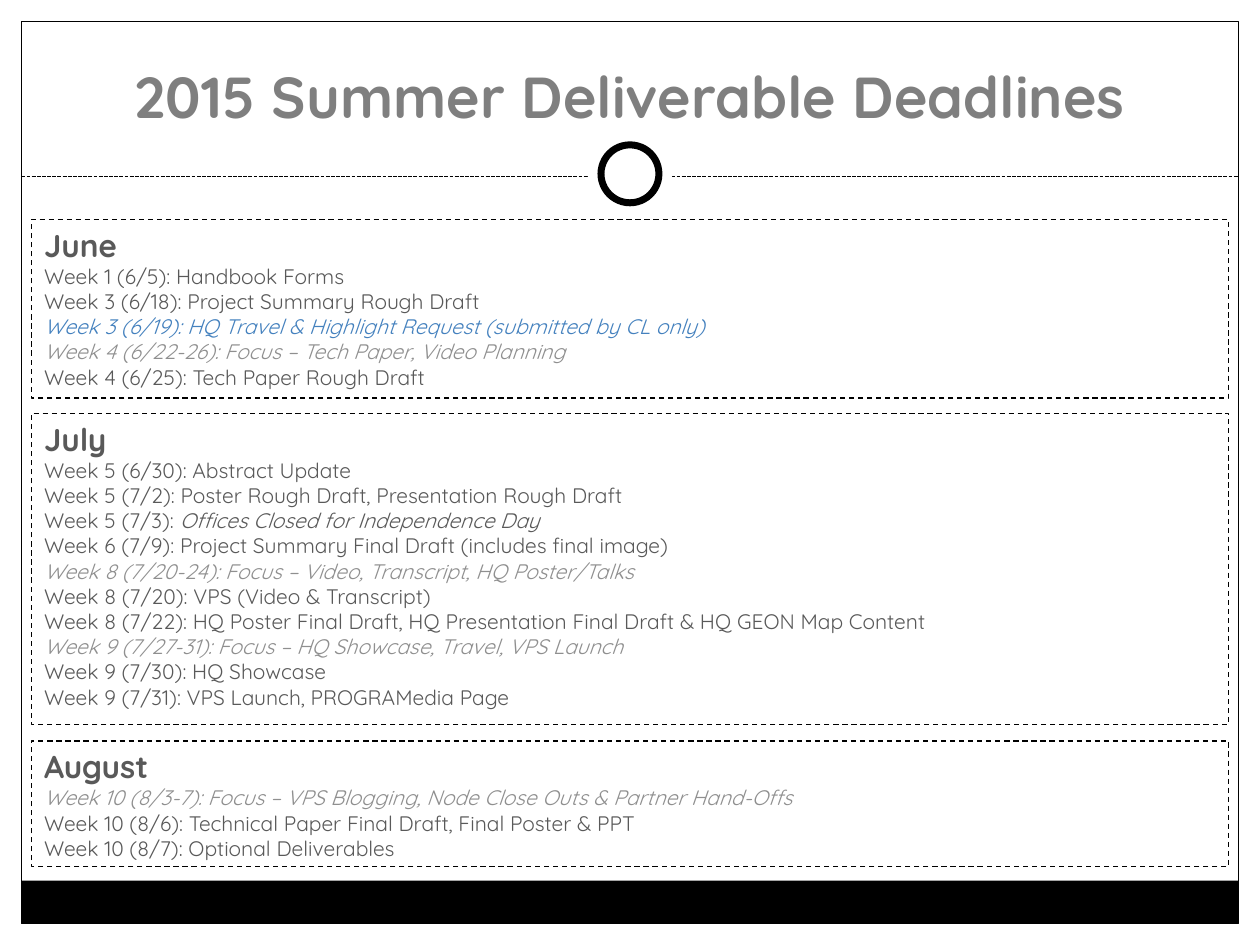
"""Build the slide of summer deliverable deadlines, one dashed box per month."""
from lxml import etree
from pptx import Presentation
from pptx import util as u
from pptx.dml.color import RGBColor
from pptx.enum import dml, shapes, text
from pptx.oxml.ns import qn

BLACK = RGBColor(0x00, 0x00, 0x00)
WHITE = RGBColor(0xFF, 0xFF, 0xFF)
DARK = RGBColor(0x59, 0x59, 0x59)
TITLE = RGBColor(0x7F, 0x7F, 0x7F)
FOCUS = RGBColor(0x8F, 0x8F, 0x8F)
BLUE = RGBColor(0x44, 0x81, 0xBE)
W, H = 10, 7.5
EDGE, MARGIN, RULE_Y, BAR_Y = 0.17, 0.25, 1.4, 6.99
RING_Y = 1.38
FONT = "Quicksand"

PLAIN = {"size": u.Pt(12), "bold": False, "italic": False, "color": DARK}
ITALIC = {**PLAIN, "italic": True}
NOTE = {**ITALIC, "color": FOCUS}
REQUEST = {**ITALIC, "color": BLUE}
HEAD = {**PLAIN, "size": u.Pt(18), "bold": True}
HEADLINE = {**HEAD, "size": u.Pt(33), "color": TITLE}

MONTHS = [
    ("June", 1.74, 1.42, [
        [("Week 1 (6/5): Handbook Forms", PLAIN)],
        [("Week 3 (6/18): Project Summary Rough Draft", PLAIN)],
        [("Week 3 (6/19): HQ Travel & Highlight Request (submitted by CL only)", REQUEST)],
        [("Week 4 (6/22-26): Focus – Tech Paper, Video Planning", NOTE)],
        [("Week 4 (6/25): Tech Paper Rough Draft", PLAIN)],
    ]),
    ("July", 3.28, 2.47, [
        [("Week 5 (6/30): Abstract Update", PLAIN)],
        [("Week 5 (7/2): Poster Rough Draft, Presentation Rough Draft", PLAIN)],
        [("Week 5 (7/3): ", PLAIN), ("Offices Closed for Independence Day", ITALIC)],
        [("Week 6 (7/9): Project Summary Final Draft (includes final image)", PLAIN)],
        [("Week 8 (7/20-24): Focus – Video, Transcript, HQ Poster/Talks", NOTE)],
        [("Week 8 (7/20): VPS (Video & Transcript)", PLAIN)],
        [("Week 8 (7/22): HQ Poster Final Draft, HQ Presentation Final Draft & HQ GEON Map Content", PLAIN)],
        [("Week 9 (7/27-31): Focus – HQ Showcase, Travel, VPS Launch", NOTE)],
        [("Week 9 (7/30): HQ Showcase", PLAIN)],
        [("Week 9 (7/31): VPS Launch, PROGRAMedia Page", PLAIN)],
    ]),
    ("August", 5.88, 1, [
        [("Week 10 (8/3-7): Focus – VPS Blogging, Node Close Outs & Partner Hand-Offs", NOTE)],
        [("Week 10 (8/6): Technical Paper Final Draft, Final Poster & PPT", PLAIN)],
        [("Week 10 (8/7): Optional Deliverables", PLAIN)],
    ]),
]


def place(sp, x, y, w, h):
    for name, value in {"left": x, "top": y, "width": w, "height": h}.items():
        setattr(sp, name, u.Inches(value))


def add_run(p, words, style):
    r = p.add_run()
    r.text = words
    r.font.name = FONT
    r.font.color.rgb = style["color"]
    for name in ("size", "bold", "italic"):
        setattr(r.font, name, style[name])


prs = Presentation()
prs.slide_width, prs.slide_height = u.Inches(W), u.Inches(H)
s = prs.slides.add_slide(prs.slide_layouts[4])
title, *bodies = s.placeholders
spare = bodies.pop()
spare._element.getparent().remove(spare._element)

OVAL, RECT = shapes.MSO_SHAPE.OVAL, shapes.MSO_SHAPE.RECTANGLE
rule = s.shapes.add_connector(shapes.MSO_CONNECTOR.STRAIGHT, u.Inches(EDGE),
                              u.Inches(RULE_Y), u.Inches(W - EDGE), u.Inches(RULE_Y))
rule.line.color.rgb = BLACK
rule.line.width = u.Pt(0.75)
rule.line.dash_style = dml.MSO_LINE.SQUARE_DOT
etree.SubElement(rule._element.spPr, qn("a:effectLst"))
decor = [rule]
for kind, w, h, y, fill, width in [
    (RECT, W - 2 * EDGE, H - EDGE - BAR_Y, BAR_Y, BLACK, None),
    (RECT, W - 2 * EDGE, H - 2 * EDGE, EDGE, None, 0.75),
    (OVAL, 0.67, 0.67, RING_Y - 0.67 / 2, WHITE, None),
    (OVAL, 0.46, 0.46, RING_Y - 0.46 / 2, WHITE, 4),
]:
    sp = s.shapes.add_shape(kind, 0, 0, 0, 0)
    place(sp, (W - w) / 2, y, w, h)
    sp.shadow.inherit = False
    if fill is None:
        sp.fill.background()
    else:
        sp.fill.solid()
        sp.fill.fore_color.rgb = fill
    if width is None:
        sp.line.fill.background()
    else:
        sp.line.color.rgb = BLACK
        sp.line.width = u.Pt(width)
    decor.append(sp)
for i, sp in enumerate(decor):
    s.shapes._spTree.insert(2 + i, sp._element)

place(title, 0.33, 0.25, W - 2 * 0.33, 0.83)
tf = title.text_frame
tf.auto_size = text.MSO_AUTO_SIZE.NONE
tf.vertical_anchor = text.MSO_ANCHOR.BOTTOM
tf.paragraphs[0].alignment = text.PP_ALIGN.CENTER
add_run(tf.paragraphs[0], "2015 Summer Deliverable Deadlines", HEADLINE)

for sp, (month, top, height, rows) in zip(bodies, MONTHS):
    place(sp, MARGIN, top, W - 2 * MARGIN, height)
    sp.line.color.rgb = BLACK
    sp.line.width = u.Pt(0.75)
    sp.line.dash_style = dml.MSO_LINE.DASH
    tf = sp.text_frame
    tf.word_wrap = True
    tf.auto_size = text.MSO_AUTO_SIZE.NONE
    tf.vertical_anchor = text.MSO_ANCHOR.TOP
    for i, row in enumerate([[(month, HEAD)]] + rows):
        p = tf.add_paragraph() if i else tf.paragraphs[0]
        p.space_before = u.Pt(0)
        hang = u.Inches(1.75 if i else 0)
        pPr = p._p.get_or_add_pPr()
        pPr.set("marL", str(hang))
        pPr.set("indent", str(-hang))
        etree.SubElement(pPr, qn("a:buNone"))
        for words, style in row:
            add_run(p, words, style)

prs.save("out.pptx")
